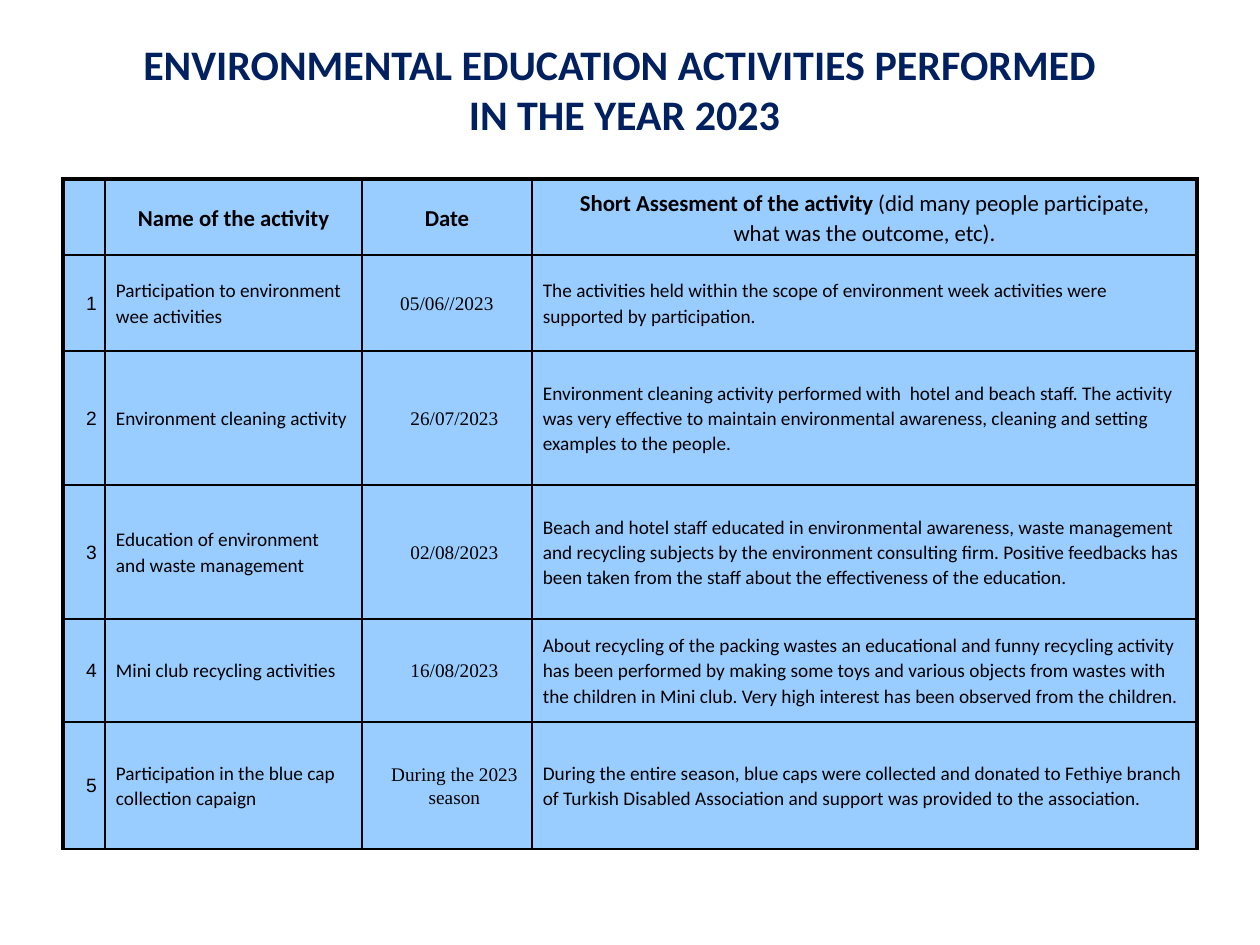
import pptx
import pptx.util
import pptx.dml.color
import pptx.enum.text
import pptx.oxml.ns
from lxml import etree

SCALE = 914400 / 126
NAVY = pptx.dml.color.RGBColor(0x00, 0x20, 0x60)
BLACK = pptx.dml.color.RGBColor(0, 0, 0)
SKY = pptx.dml.color.RGBColor(0x99, 0xCC, 0xFF)
CENTER = pptx.enum.text.PP_ALIGN.CENTER
LEFT = pptx.enum.text.PP_ALIGN.LEFT
MIDDLE = pptx.enum.text.MSO_ANCHOR.MIDDLE

TITLE = "ENVIRONMENTAL EDUCATION ACTIVITIES PERFORMED \nIN THE YEAR 2023"
HEADS = ["", "Name of the activity", "Date", "Short Assesment of the activity"]
HINT = [" (did many people participate,", "what was the outcome, etc)."]
ROWS = [
    ("Participation to environment wee activities", "05/06//2023",
     "The activities held within the scope of environment week activities "
     "were supported by participation."),
    ("Environment cleaning activity", "26/07/2023",
     "Environment cleaning activity performed with  hotel and beach staff. "
     "The activity was very effective to maintain environmental awareness, "
     "cleaning and setting examples to the people."),
    ("Education of environment and waste management", "02/08/2023",
     "Beach and hotel staff educated in environmental awareness, waste "
     "management and recycling subjects by the environment consulting firm. "
     "Positive feedbacks has been taken from the staff about the "
     "effectiveness of the education."),
    ("Mini club recycling activities", "16/08/2023",
     "About recycling of the packing wastes an educational and funny "
     "recycling activity has been performed by making some toys and various "
     "objects from wastes with the children in Mini club. Very high interest "
     "has been observed from the children."),
    ("Participation in the blue cap collection capaign", "During the 2023 season",
     "During the entire season, blue caps were collected and donated to "
     "Fethiye branch of Turkish Disabled Association and support was "
     "provided to the association."),
]
WIDTHS = [42, 257, 170, 665]
HEIGHTS = [76, 96, 134, 134, 103, 127]
FONTS = ["Arial", "Calibri", "Times New Roman", "Calibri"]
ALIGNS = [CENTER, LEFT, CENTER, LEFT]
INDENTS = [15, 0, 15, 0]


def px(num):
    return pptx.util.Emu(round(num * SCALE))


def style(para, font, size, color, bold=False, align=CENTER):
    para.alignment = align
    for run in para.runs:
        run.font.name = font
        run.font.size = pptx.util.Pt(size)
        run.font.bold = bold
        run.font.color.rgb = color


def indent(para, left, first=0):
    """Set the left margin and first-line indent of a paragraph."""
    props = para._p.get_or_add_pPr()
    props.set("marL", str(px(left)))
    props.set("indent", str(px(first)))


def add_title(slide):
    title = slide.shapes.title
    title.left, title.top, title.width, title.height = map(px, (126, 31, 997, 115))
    frame = title.text_frame
    frame.text = TITLE
    frame.word_wrap = False
    frame.auto_size = pptx.enum.text.MSO_AUTO_SIZE.NONE
    frame.vertical_anchor = MIDDLE
    for para in frame.paragraphs:
        style(para, "Calibri", 24, NAVY, bold=True)


def set_edges(cell, widths):
    """Draw cell borders; widths maps L, R, T, B to points."""
    qn = pptx.oxml.ns.qn
    props = cell._tc.get_or_add_tcPr()
    for side, width in widths.items():
        line = etree.SubElement(props, qn("a:ln" + side), w=str(pptx.util.Pt(width)))
        fill = etree.SubElement(line, qn("a:solidFill"))
        etree.SubElement(fill, qn("a:srgbClr"), val=str(BLACK))


def format_cell(cell, row, col):
    set_edges(cell, {
        "L": 2.25 if col == 0 else 1,
        "R": 2.25 if col == len(WIDTHS) - 1 else 1,
        "T": 2.25 if row == 0 else 1,
        "B": 1,
    })
    cell.fill.solid()
    cell.fill.fore_color.rgb = SKY
    cell.vertical_anchor = MIDDLE
    cell.margin_left = cell.margin_right = px(11)
    cell.margin_top = px(6 if row else 1)
    cell.margin_bottom = px(6 if row else 0)


def fill_head(cell, text):
    frame = cell.text_frame
    frame.text = text
    style(frame.paragraphs[0], "Calibri", 13, BLACK, bold=True)
    frame.paragraphs[0].line_spacing = 1.07


def add_hint(cell):
    """Continue the last heading in regular weight."""
    frame = cell.text_frame
    first, last = frame.paragraphs[0], frame.add_paragraph()
    first.add_run().text = HINT[0]
    last.text = HINT[1]
    for para in (first, last):
        style(para, "Calibri", 13, BLACK)
        para.line_spacing = 1.07
    first.runs[0].font.bold = True


def fill_body(cell, text, col):
    para = cell.text_frame.paragraphs[0]
    para.text = text
    style(para, FONTS[col], 11, BLACK, align=ALIGNS[col])
    para.line_spacing = 1.07
    indent(para, INDENTS[col])


def add_grid(slide):
    frame = slide.shapes.add_table(
        len(HEIGHTS), len(WIDTHS), px(63), px(179), px(sum(WIDTHS)), px(sum(HEIGHTS)))
    table = frame.table
    table.first_row = table.horz_banding = False
    for column, width in zip(table.columns, WIDTHS):
        column.width = px(width)
    for line, height in zip(table.rows, HEIGHTS):
        line.height = px(height)
    body = [(str(num), *texts) for num, texts in enumerate(ROWS, 1)]
    for row, texts in enumerate([HEADS] + body):
        for col, text in enumerate(texts):
            cell = table.cell(row, col)
            format_cell(cell, row, col)
            if row:
                fill_body(cell, text, col)
            elif text:
                fill_head(cell, text)
    add_hint(table.cell(0, 3))
    indent(table.cell(1, 2).text_frame.paragraphs[0], 48, -48)


def main():
    deck = pptx.Presentation()
    deck.slide_width, deck.slide_height = px(1260), px(945)
    slide = deck.slides.add_slide(deck.slide_layouts[5])
    add_title(slide)
    add_grid(slide)
    deck.save("out.pptx")


if __name__ == "__main__":
    main()
